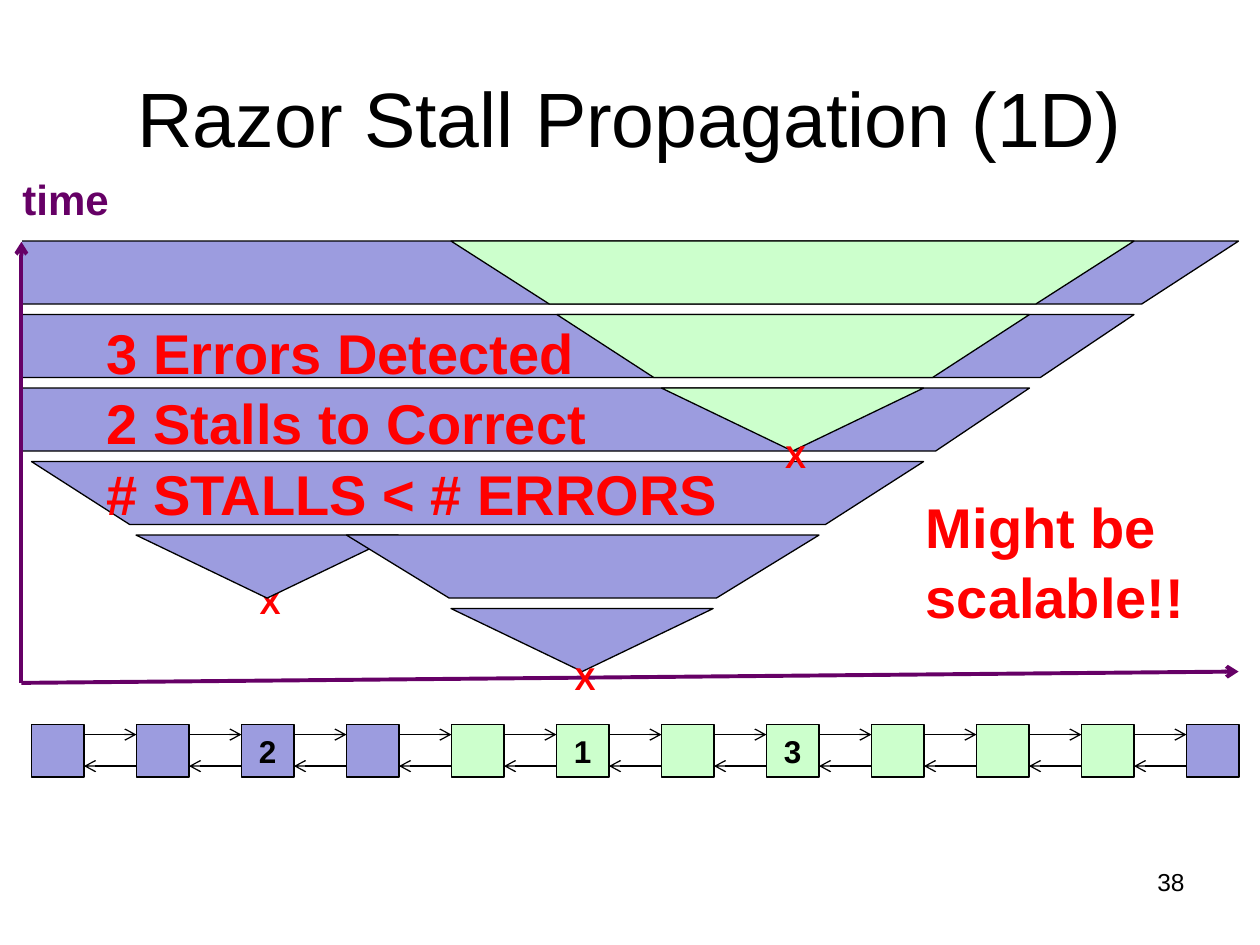
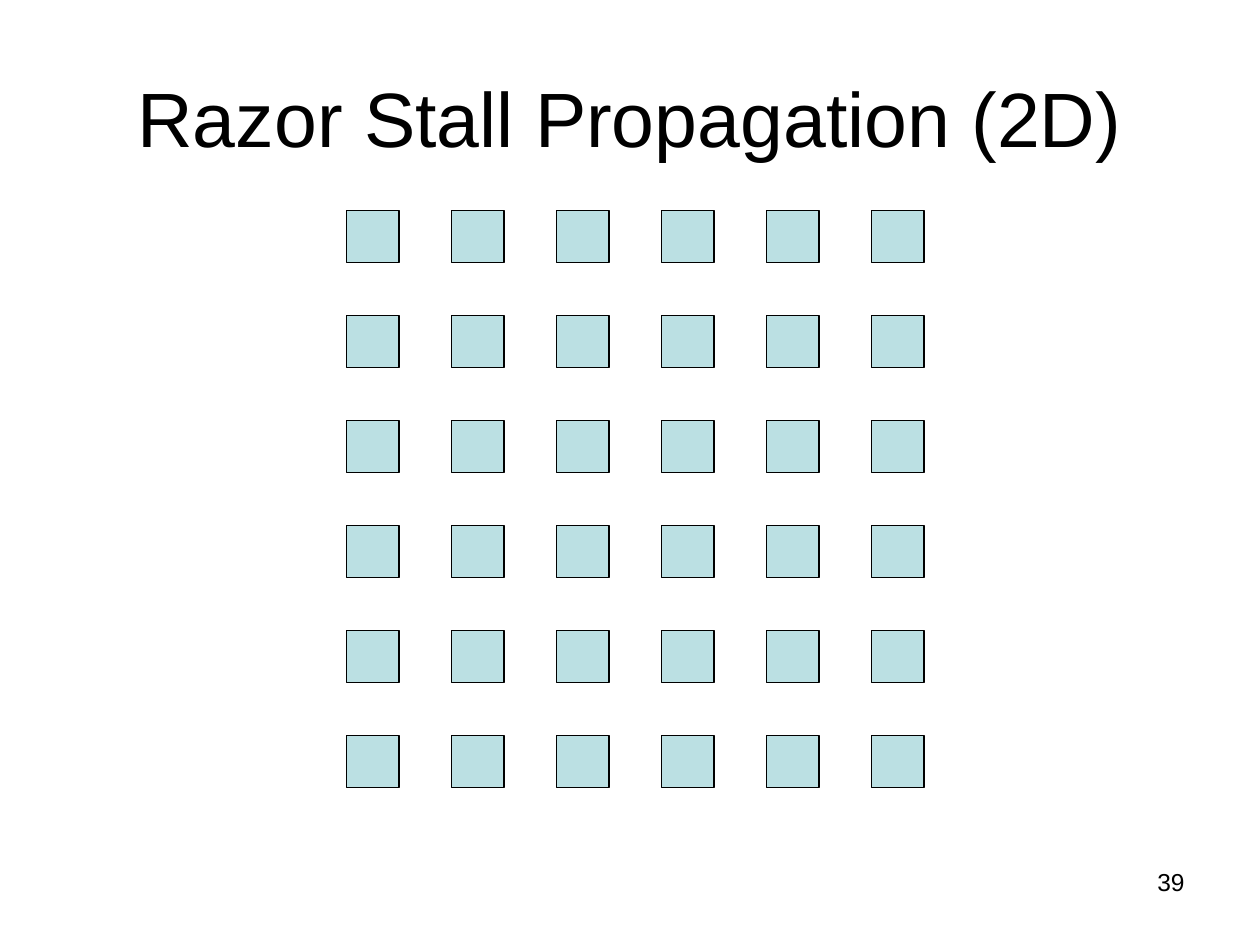
import pptx
import pptx.dml.color
import pptx.enum.shapes
import pptx.enum.text
import pptx.oxml
import pptx.oxml.ns
import pptx.util

Inches = pptx.util.Inches
Kind = pptx.enum.shapes.MSO_SHAPE
Align = pptx.enum.text.PP_ALIGN
Anchor = pptx.enum.text.MSO_ANCHOR

FONT = "Arial"
COLORS = {
    "black": "000000",
    "white": "FFFFFF",
    "violet": "9C9CDF",
    "green": "CCFFCC",
    "teal": "BBE0E3",
    "purple": "660066",
    "red": "FF0000",
}
PITCH = 10 / 12
CELL = PITCH / 2
WAVE_HEIGHT = 0.5
WAVE_STEP = 7 / 12


def add_box(slide, at, kind=None, fill=None, outline="black", lines=(), size=18, color="black",
            bold=True, align=Align.LEFT, anchor=Anchor.TOP, wrap=True, spacing=1.0):
    left, top, width, height = [Inches(length) for length in at]
    if kind is None:
        box = slide.shapes.add_textbox(left, top, width, height)
    else:
        box = slide.shapes.add_shape(kind, left, top, width, height)
        box.shadow.inherit = False
        box.fill.solid()
        box.fill.fore_color.rgb = pptx.dml.color.RGBColor.from_string(COLORS[fill])
        box.line.color.rgb = pptx.dml.color.RGBColor.from_string(COLORS[outline])
        box.line.width = pptx.util.Pt(0.75)
    if lines:
        frame = box.text_frame
        frame.word_wrap = wrap
        frame.vertical_anchor = anchor
        frame.text = "\n".join(lines)
        for para in frame.paragraphs:
            para.alignment = align
            para.line_spacing = spacing
            para.font.name = FONT
            para.font.size = pptx.util.Pt(size)
            para.font.bold = bold
            para.font.color.rgb = pptx.dml.color.RGBColor.from_string(COLORS[color])
    return box


def add_arrow(slide, start, end, color="black", width=0.75):
    arrow = slide.shapes.add_connector(
        pptx.enum.shapes.MSO_CONNECTOR.STRAIGHT, *[Inches(length) for length in start + end])
    arrow.line.color.rgb = pptx.dml.color.RGBColor.from_string(COLORS[color])
    arrow.line.width = pptx.util.Pt(width)
    head = pptx.oxml.parse_xml('<a:tailEnd %s type="arrow"/>' % pptx.oxml.ns.nsdecls("a"))
    arrow.line._get_or_add_ln().append(head)
    effects = pptx.oxml.parse_xml("<a:effectLst %s/>" % pptx.oxml.ns.nsdecls("a"))
    arrow._element.spPr.append(effects)


deck = pptx.Presentation()
deck.slide_width = Inches(10)
deck.slide_height = Inches(7.5)

slides = []
for dimension, number in (("1D", "38"), ("2D", "39")):
    slide = deck.slides.add_slide(deck.slide_layouts[6])
    add_box(slide, (0.5, 0.3, 9, 1.25), lines=[f"Razor Stall Propagation ({dimension})"],
            size=44, bold=False, align=Align.CENTER, anchor=Anchor.MIDDLE)
    add_box(slide, (7.17, 6.83, 2.33, 0.52), lines=[number], size=14, bold=False,
            align=Align.RIGHT)
    slides.append(slide)
line_slide, grid_slide = slides

error_order = {2: "2", 5: "1", 7: "3"}
for column in range(12):
    left = 0.25 + column * PITCH
    fill = "green" if 4 <= column <= 10 else "violet"
    label = [error_order[column]] if column in error_order else []
    add_box(line_slide, (left, 5.75, CELL, CELL), Kind.RECTANGLE, fill, lines=label,
            align=Align.CENTER, anchor=Anchor.MIDDLE)
    if column < 11:
        add_arrow(line_slide, (left + CELL, 5.83), (left + PITCH, 5.83))
        add_arrow(line_slide, (left + PITCH, 6.08), (left + CELL, 6.08))

add_arrow(line_slide, (0.17, 5.42), (9.83, 5.33), "purple", 2.25)
add_box(line_slide, (0.08, 1.33, 0.89, 0.5), lines=["time"], size=24, color="purple", wrap=False)

waves = [
    (0, 3.58, 2.08, None, "violet", [(4.46, 5.18), (1.96, 4.58)]),
    (1, 1.08, 2.08, None, "violet", []),
    (1, 2.75, 3.75, 1.63, "violet", []),
    (2, 0.25, 7.08, 1.56, "violet", []),
    (3, -0.58, 8.75, 1.49, "violet", []),
    (3, 5.25, 2.08, None, "green", [(6.13, 3.42)]),
    (4, -0.75, 9.75, 1.49, "violet", []),
    (4, 4.42, 3.75, 1.54, "green", []),
    (5, -1, 10.83, 1.54, "violet", []),
    (5, 3.58, 5.42, 1.56, "green", []),
]
for level, left, width, slant, fill, errors in waves:
    kind = Kind.TRAPEZOID if slant else Kind.ISOSCELES_TRIANGLE
    wave = add_box(line_slide, (left, 4.83 - level * WAVE_STEP, width, WAVE_HEIGHT), kind, fill)
    wave.rotation = 180
    if slant:
        wave.adjustments[0] = slant
    for error_left, error_top in errors:
        add_box(line_slide, (error_left, error_top, 0.37, 0.4), lines=["X"], color="red",
                align=Align.CENTER, wrap=False)

add_box(line_slide, (-0.58, 1.75, 0.75, 1.92), Kind.RECTANGLE, "white", "white")
add_arrow(line_slide, (0.17, 5.42), (0.17, 1.92), "purple", 2.25)

findings = [
    ((0.75, 2.45, 6, 1.72), ["3 Errors Detected", "2 Stalls to Correct", "# STALLS < # ERRORS"]),
    ((7.25, 3.83, 2.67, 1.18), ["Might be", "scalable!!"]),
]
for at, lines in findings:
    add_box(line_slide, at, lines=lines, size=32, color="red", spacing=1.05)

for row in range(6):
    for column in range(6):
        add_box(grid_slide, (2.75 + column * PITCH, 1.67 + row * PITCH, CELL, CELL),
                Kind.RECTANGLE, "teal")

deck.save("out.pptx")
